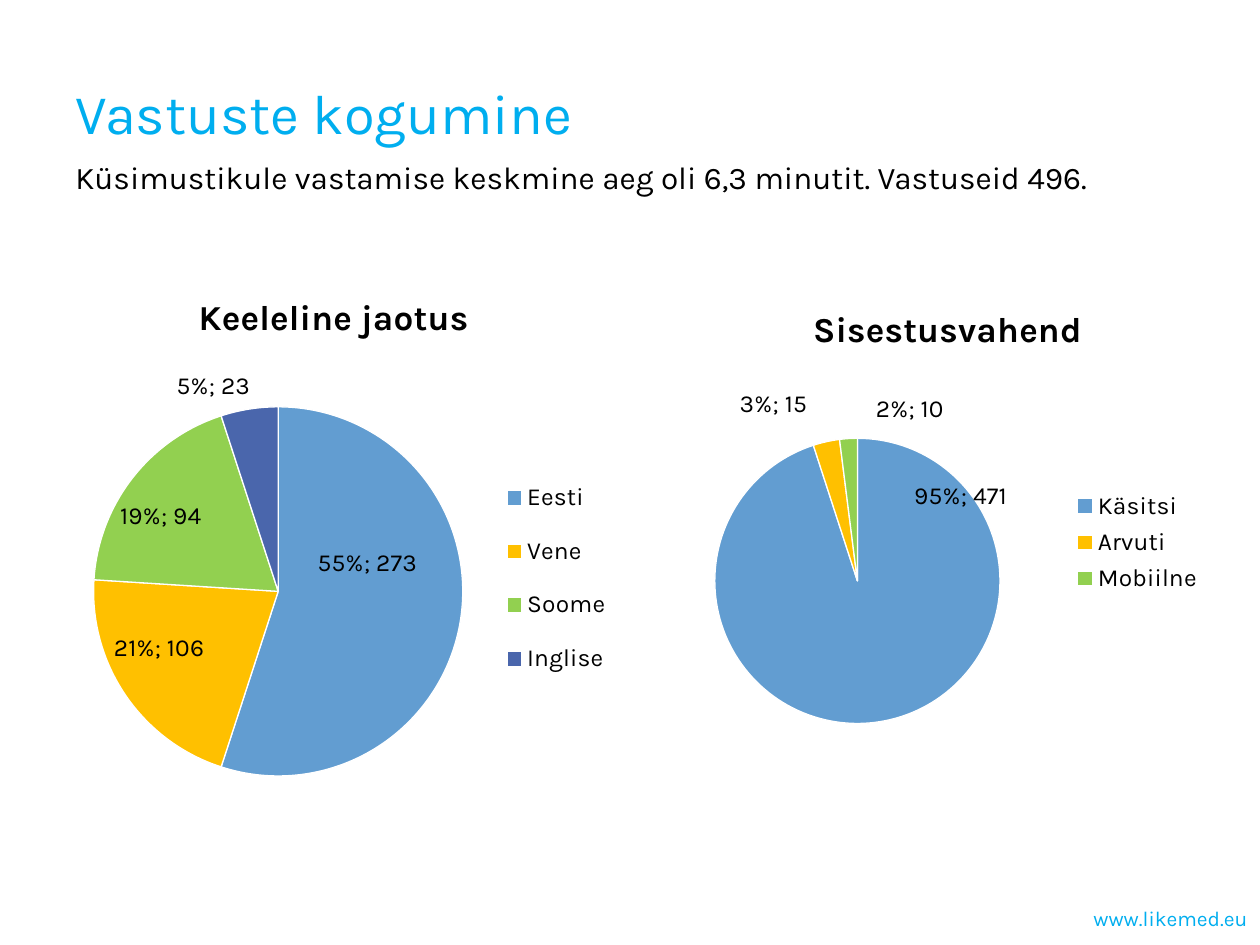
import math

import lxml.etree
import pptx
import pptx.chart.data
import pptx.dml.color
import pptx.enum.chart
import pptx.enum.text
import pptx.oxml
import pptx.oxml.ns
import pptx.util

Pt = pptx.util.Pt
qn = pptx.oxml.ns.qn
ALIGN = pptx.enum.text.PP_ALIGN
ANCHOR = pptx.enum.text.MSO_ANCHOR
COLORS = ["629DD1", "FFC000", "92D050", "4A66AC"]


def rgb(value):
    return pptx.dml.color.RGBColor.from_string(value)


def set_layout(parent, index, **values):
    for old in parent.findall(qn("c:layout")):
        parent.remove(old)
    layout = parent.makeelement(qn("c:layout"))
    manual = lxml.etree.SubElement(layout, qn("c:manualLayout"))
    for name, value in values.items():
        lxml.etree.SubElement(manual, qn("c:" + name)).set("val", str(value))
    parent.insert(index, layout)


class Deck:
    """Holds the style and the current slide, and adds elements to it."""

    def __init__(self, font="Karla", accent="00AEEF", ink="000000"):
        self.font, self.accent, self.ink = font, accent, ink
        self.prs = pptx.Presentation()
        self.prs.slide_width, self.prs.slide_height = Pt(720), Pt(540)
        self.s = self.prs.slides.add_slide(self.prs.slide_layouts[6])

    def style(self, font, size, color, bold=False):
        font.name, font.size, font.bold = self.font, Pt(size), bold
        font.color.rgb = rgb(color)

    def text(self, box, text, size, color, align=ALIGN.LEFT, anchor=ANCHOR.MIDDLE):
        tf = self.s.shapes.add_textbox(*map(Pt, box)).text_frame
        tf.word_wrap, tf.vertical_anchor = True, anchor
        p = tf.paragraphs[0]
        p.alignment = align
        r = p.add_run()
        r.text = text
        self.style(r.font, size, color)

    def pie(self, box, title, title_at, center, radius, legend_box, rows):
        left, top, width, height = box

        def place(x, y, w=None, h=None):
            values = dict(xMode="edge", yMode="edge",
                          x=round((x - left) / width, 4), y=round((y - top) / height, 4))
            if w:
                values.update(w=round(w / width, 4), h=round(h / height, 4))
            return values

        data = pptx.chart.data.CategoryChartData()
        data.categories = [row[0] for row in rows]
        data.add_series("Series 1", [row[1] for row in rows])
        chart = self.s.shapes.add_chart(
            pptx.enum.chart.XL_CHART_TYPE.PIE, *map(Pt, box), data).chart
        self.style(chart.font, 10, self.ink)

        chart.has_title = True
        r = chart.chart_title.text_frame.paragraphs[0].add_run()
        r.text = title
        self.style(r.font, 20, self.ink, bold=True)
        set_layout(chart.chart_title._element, 1, **place(*title_at))

        chart.has_legend = True
        chart.legend.position = pptx.enum.chart.XL_LEGEND_POSITION.RIGHT
        chart.legend.include_in_layout = False
        self.style(chart.legend.font, 14, self.ink)
        set_layout(chart.legend._element, 1, **place(*legend_box))

        plot = chart.plots[0]
        plot.vary_by_categories = True
        cx, cy = center
        set_layout(plot._element.getparent(), 0, layoutTarget="inner",
                   **place(cx - radius, cy - radius, 2 * radius, 2 * radius))
        self.slices(plot.series[0], box, center, radius, rows)

    def slices(self, series, box, center, radius, rows):
        total, start = sum(row[1] for row in rows), 0
        for i, (_, value, count, target) in enumerate(rows):
            point = series.points[i]
            point.format.fill.solid()
            point.format.fill.fore_color.rgb = rgb(COLORS[i])
            point.format.line.color.rgb = rgb("FFFFFF")
            point.format.line.width = Pt(0.75)

            label = point.data_label
            r = label.text_frame.paragraphs[0].add_run()
            r.text = f"{value}%; {count}"
            self.style(r.font, 14, self.ink)
            label.position = pptx.enum.chart.XL_LABEL_POSITION.CENTER

            angle = 2 * math.pi * (start + value / 2) / total
            x = center[0] + radius / 2 * math.sin(angle)
            y = center[1] - radius / 2 * math.cos(angle)
            dlbl = series._element.findall(".//" + qn("c:dLbl"))[i]
            set_layout(dlbl, 1, x=round((target[0] - x) / box[2], 4),
                       y=round((target[1] - y) / box[3], 4))
            start += value
        for leader in series._element.iter(qn("c:showLeaderLines")):
            leader.set("val", "0")


def main():
    deck = Deck()
    deck.text((36, 6, 648, 116), "Vastuste kogumine", 32, deck.accent)
    deck.text((492, 510, 228, 29), "www.likemed.eu", 12, deck.accent, ALIGN.RIGHT)
    deck.text((36, 87, 648, 70),
              "Küsimustikule vastamise keskmine aeg oli 6,3 minutit. Vastuseid 496.",
              18, deck.ink, ALIGN.JUSTIFY, ANCHOR.TOP)
    deck.pie((-47, 156, 497, 297), "Keeleline jaotus", (110, 164),
             (159, 338), 105.5, (286, 262, 64, 137),
             [("Eesti", 55, 273, (210, 322)), ("Vene", 21, 106, (91, 371)),
              ("Soome", 19, 94, (92, 295)), ("Inglise", 5, 23, (122, 221))])
    deck.pie((284, 160, 505, 284), "Sisestusvahend", (461, 171),
             (490, 332), 81.5, (612, 277, 76, 66),
             [("Käsitsi", 95, 471, (549, 284)), ("Arvuti", 3, 15, (442, 231)),
              ("Mobiilne", 2, 10, (520, 234))])
    deck.prs.save("out.pptx")


if __name__ == "__main__":
    main()
